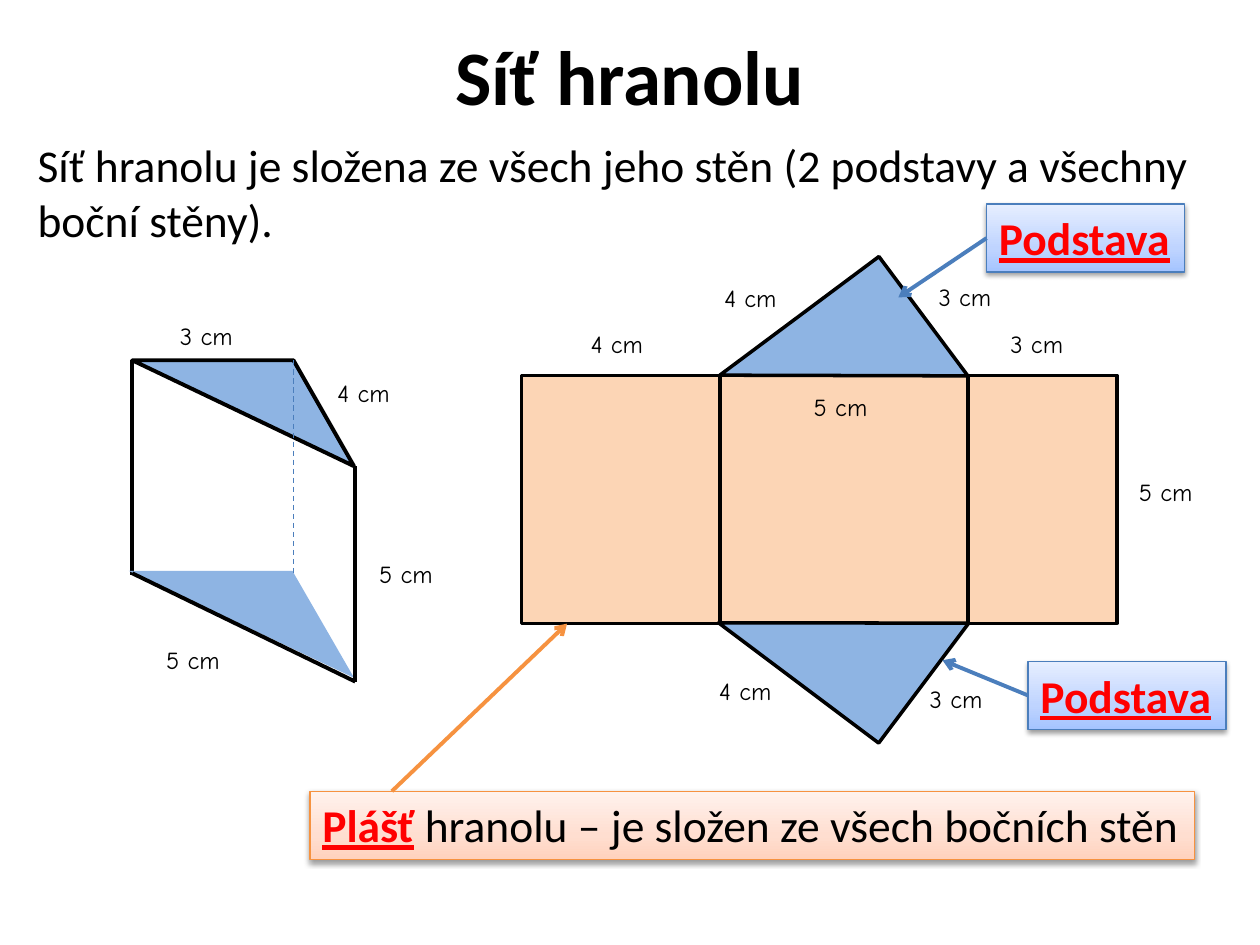
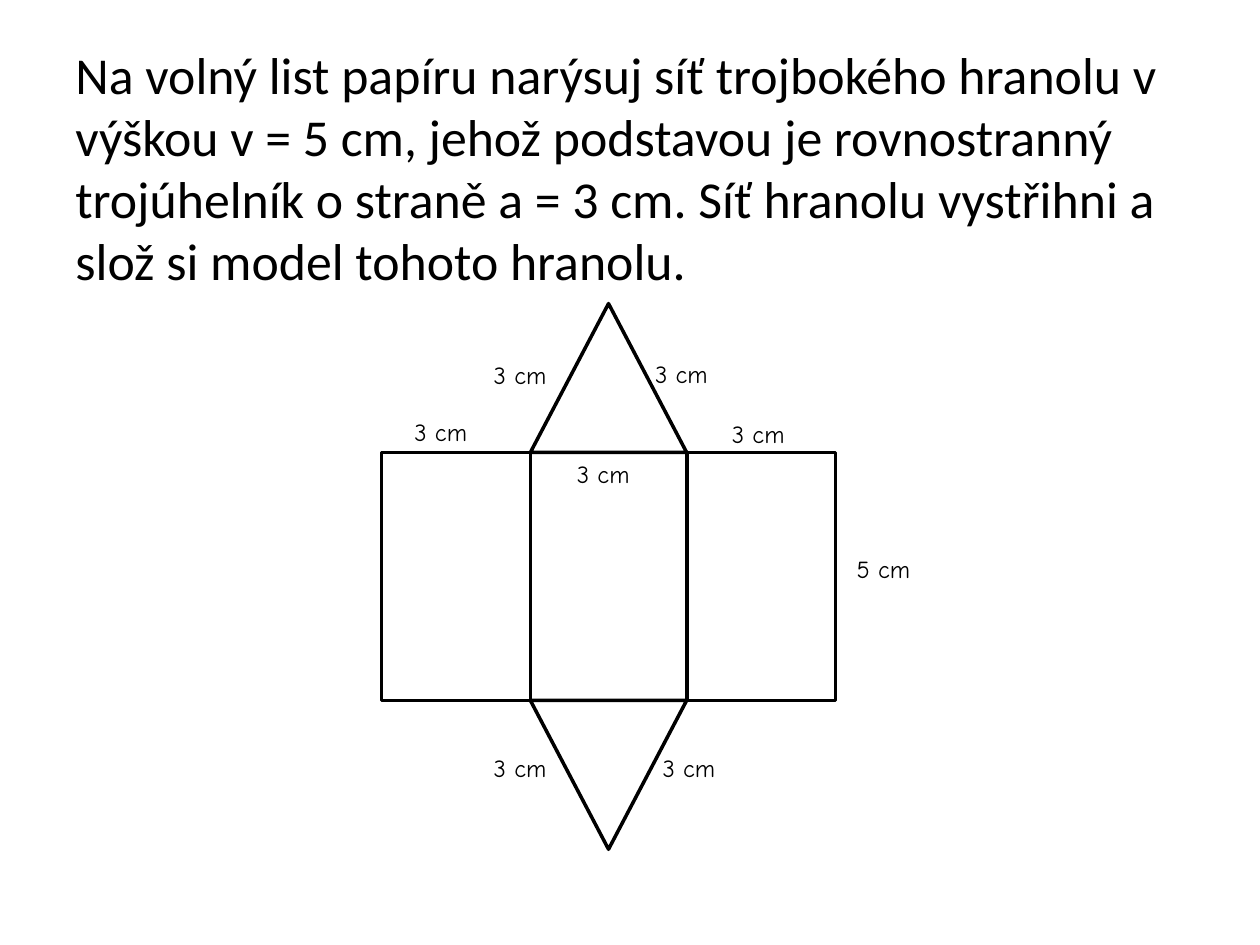
from lxml import etree
from pptx import Presentation
from pptx.dml.color import RGBColor
from pptx.enum.dml import MSO_LINE
from pptx.enum.shapes import MSO_CONNECTOR, MSO_SHAPE
from pptx.enum.text import MSO_ANCHOR, MSO_AUTO_SIZE, PP_ALIGN
from pptx.oxml import parse_xml
from pptx.oxml.ns import nsdecls, qn
from pptx.util import Inches, Pt

BLACK = RGBColor(0x00, 0x00, 0x00)
RED = RGBColor(0xFF, 0x00, 0x00)
PEACH = RGBColor(0xFC, 0xD5, 0xB5)
BASE_BLUE = RGBColor(0x8E, 0xB4, 0xE3)
BLUE = RGBColor(0x4B, 0x7E, 0xBC)
ORANGE = RGBColor(0xF6, 0x92, 0x40)
BLUE_STOPS = ("A4C4FF", "BFD4FF", "E6EEFF")
ORANGE_STOPS = ("FFD2BD", "FFDED0", "FFF2ED")
TEXT_FONT, LABEL_FONT = "Calibri", "Comic Neue"
CM = 1 / 2.54  # the nets are drawn at true scale
HEIGHT = 5 * CM


def write(shape, runs, size, font=TEXT_FONT):
    """Fill the shape with one left-aligned paragraph; marked runs are key terms."""
    frame = shape.text_frame
    frame.word_wrap = True
    frame.vertical_anchor = MSO_ANCHOR.TOP
    paragraph = frame.paragraphs[0]
    paragraph.alignment = PP_ALIGN.LEFT
    for text, is_term in runs:
        run = paragraph.add_run()
        run.text = text
        run.font.name = font
        run.font.size = Pt(size)
        run.font.bold = run.font.underline = is_term
        run.font.color.rgb = RED if is_term else BLACK
    return frame


def draw_line(slide, start, end, color=BLACK, width=2.25):
    line = slide.shapes.add_connector(
        MSO_CONNECTOR.STRAIGHT, *[Inches(v) for v in (*start, *end)])
    line.line.color.rgb = color
    line.line.width = Pt(width)
    etree.SubElement(line._element.spPr, qn("a:effectLst"))
    return line


prs = Presentation()
prs.slide_width, prs.slide_height = Inches(10), Inches(7.5)
net_slide, task_slide = [prs.slides.add_slide(prs.slide_layouts[6]) for _ in range(2)]

# Headings and running text
for slide, box, text, size in (
    (net_slide, (0.5, -0.03, 9, 1.25), "Síť hranolu", 44),
    (net_slide, (0.2, 1.04, 9.8, 0.98),
     "Síť hranolu je složena ze všech jeho stěn (2 podstavy a všechny boční stěny).", 26),
    (task_slide, (0.5, 0.29, 9.22, 2.44),
     "Na volný list papíru narýsuj síť trojbokého hranolu v výškou v = 5 cm, "
     "jehož podstavou je rovnostranný trojúhelník o straně a = 3 cm. "
     "Síť hranolu vystřihni a slož si model tohoto hranolu.", 29.6),
):
    frame = write(slide.shapes.add_textbox(*map(Inches, box)), [(text, False)], size)
    if size == 44:
        frame.vertical_anchor = MSO_ANCHOR.MIDDLE
        frame.paragraphs[0].alignment = PP_ALIGN.CENTER
        frame.paragraphs[0].runs[0].font.bold = True

# Nets: a row of side faces with a base above and below the middle one
for slide, left, top, face_widths, face_fill, base_fill, bases in (
    (net_slide, 4.14, 2.98, (4 * CM, 5 * CM, 3 * CM), PEACH, BASE_BLUE, (
        (MSO_SHAPE.RIGHT_TRIANGLE, (5.91, 2.39, 4 * CM, 3 * CM), 143.3, False),
        (MSO_SHAPE.RIGHT_TRIANGLE, (5.9, 4.35, 1.59, 1.19), 216.9, True))),
    (task_slide, 3.03, 3.59, (3 * CM, 1.24, 3 * CM), None, None, (
        (MSO_SHAPE.ISOSCELES_TRIANGLE, (4.21, 2.41, 1.24, 3 * CM), 0, False),
        (MSO_SHAPE.ISOSCELES_TRIANGLE, (4.21, 5.56, 1.24, 3 * CM), 0, True))),
):
    parts = []
    for width in face_widths:
        parts.append((MSO_SHAPE.RECTANGLE, (left, top, width, HEIGHT), 0, False, face_fill))
        left += width
    parts += [(*base, base_fill) for base in bases]
    for kind, box, rotation, is_flipped, fill in parts:
        part = slide.shapes.add_shape(kind, *map(Inches, box))
        part.rotation = rotation
        part.shadow.inherit = False
        if is_flipped:
            part._element.spPr.find(qn("a:xfrm")).set("flipV", "1")
        if fill is None:
            part.fill.background()
        else:
            part.fill.solid()
            part.fill.fore_color.rgb = fill
        part.line.color.rgb = BLACK
        part.line.width = Pt(2)

# Prism drawn in space
draw_line(net_slide, (1.05, 2.86), (1.05, 4.56))
for corners, has_outline in (
    (((1.05, 2.86), (2.33, 2.86), (2.81, 3.7)), True),
    (((1.02, 4.53), (2.32, 4.53), (2.81, 5.38)), False),
):
    first, *others = [(Inches(x), Inches(y)) for x, y in corners]
    outline = net_slide.shapes.build_freeform(*first)
    outline.add_line_segments(others, close=True)
    prism_base = outline.convert_to_shape()
    prism_base.shadow.inherit = False
    prism_base.fill.solid()
    prism_base.fill.fore_color.rgb = BASE_BLUE
    if has_outline:
        prism_base.line.color.rgb = BLACK
        prism_base.line.width = Pt(2.25)
    else:
        prism_base.line.fill.background()
draw_line(net_slide, (2.82, 3.7), (2.82, 5.41))
draw_line(net_slide, (1.05, 4.55), (2.82, 5.41))
hidden_edge = draw_line(net_slide, (2.33, 2.86), (2.33, 4.56), BLUE, 0.75)
hidden_edge.line.dash_style = MSO_LINE.DASH

# Edge lengths
for slide, length, places in (
    (net_slide, "3 cm", ((7.92, 2.56), (7.35, 2.19), (7.28, 5.38), (1.33, 2.5))),
    (net_slide, "4 cm", ((4.59, 2.56), (5.65, 2.2), (5.61, 5.32), (2.58, 2.95))),
    (net_slide, "5 cm", ((6.36, 3.06), (8.94, 3.74), (2.91, 4.39), (1.22, 5.07))),
    (task_slide, "3 cm", ((3.19, 3.26), (5.71, 3.28), (4.48, 3.59), (5.1, 2.8),
                          (5.16, 5.93), (3.82, 2.81), (3.82, 5.93))),
    (task_slide, "5 cm", ((6.7, 4.35),)),
):
    for x, y in places:
        label = slide.shapes.add_textbox(Inches(x), Inches(y), Inches(0.71), Inches(0.34))
        write(label, [(length, False)], 14, LABEL_FONT)

# Callouts, each with an arrow to the part it names
base_runs = [("Podstava", True)]
mantle_runs = [("Plášť", True), (" hranolu – je složen ze všech bočních stěn", False)]
for x, y, width, runs, color, stops, start, target in (
    (2.46, 6.28, 7.02, mantle_runs, ORANGE, ORANGE_STOPS, (3.11, 6.28), (4.5, 4.95)),
    (7.83, 1.62, 1.57, base_runs, BLUE, BLUE_STOPS, None, (7.13, 2.36)),
    (8.16, 5.25, 1.57, base_runs, BLUE, BLUE_STOPS, None, (7.48, 5.24)),
):
    callout = net_slide.shapes.add_shape(
        MSO_SHAPE.RECTANGLE, Inches(x), Inches(y), Inches(width), Inches(0.54))
    properties = callout._element.spPr
    gradient = "".join(
        f'<a:gs pos="{position}"><a:srgbClr val="{stop}"/></a:gs>'
        for position, stop in zip((0, 35000, 100000), stops))
    properties.append(parse_xml(
        f'<a:gradFill {nsdecls("a")} rotWithShape="1"><a:gsLst>{gradient}</a:gsLst>'
        '<a:lin ang="16200000" scaled="1"/></a:gradFill>'))
    callout.line.color.rgb = color
    callout.line.width = Pt(0.75)
    properties.append(parse_xml(
        f'<a:effectLst {nsdecls("a")}><a:outerShdw blurRad="{Pt(3.1)}" dist="{Pt(1.6)}" '
        'dir="5400000" rotWithShape="0"><a:srgbClr val="000000"><a:alpha val="38000"/>'
        '</a:srgbClr></a:outerShdw></a:effectLst>'))
    frame = write(callout, runs, 26)
    frame.word_wrap = False
    frame.auto_size = MSO_AUTO_SIZE.SHAPE_TO_FIT_TEXT

    arrow = draw_line(net_slide, start or (x, y + 0.27), target, color)
    if start is None:
        arrow.begin_connect(callout, 1)
    etree.SubElement(arrow.line._get_or_add_ln(), qn("a:tailEnd"), type="arrow")

prs.save("out.pptx")
